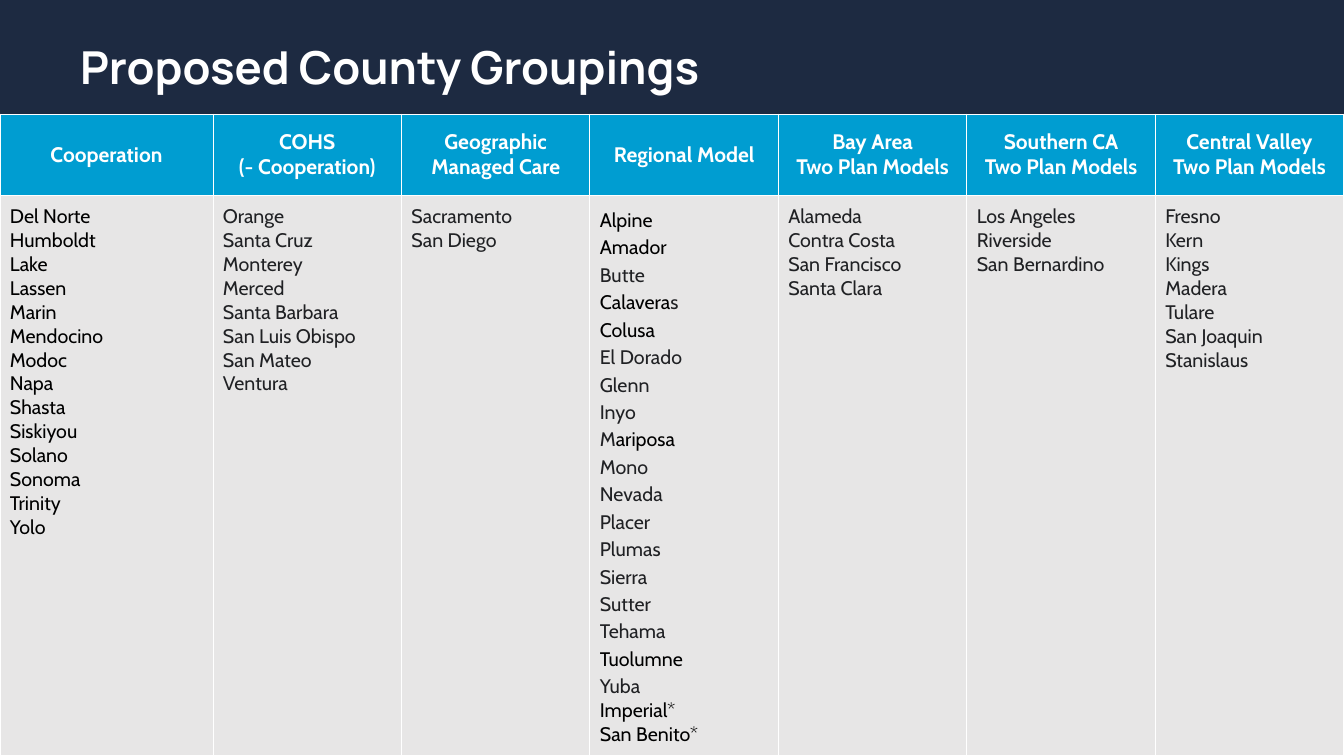
from lxml import etree
from pptx import Presentation
from pptx.dml.color import RGBColor
from pptx.enum.shapes import MSO_SHAPE
from pptx.enum.text import MSO_ANCHOR, PP_ALIGN
from pptx.oxml.ns import qn
from pptx.util import Pt

RECT = MSO_SHAPE.RECTANGLE
MIDDLE, TOP = MSO_ANCHOR.MIDDLE, MSO_ANCHOR.TOP
CENTER, LEFT = PP_ALIGN.CENTER, PP_ALIGN.LEFT

NAVY, BLUE, GREY, WHITE = "1D2A41", "009DD1", "E7E6E6", "FFFFFF"
BLACK, INK = "000000", "202124"

TITLE = "Proposed County Groupings"
# Each group: heading lines, then its counties
GROUPS = [
    (["Cooperation"],
     ["Del Norte", "Humboldt", "Lake", "Lassen", "Marin", "Mendocino", "Modoc",
      "Napa", "Shasta", "Siskiyou", "Solano", "Sonoma", "Trinity", "Yolo"]),
    (["COHS", "(- Cooperation)"],
     ["Orange", "Santa Cruz", "Monterey", "Merced", "Santa Barbara",
      "San Luis Obispo", "San Mateo", "Ventura"]),
    (["Geographic Managed Care"], ["Sacramento", "San Diego"]),
    (["Regional Model"],
     ["Alpine", "Amador", "Butte", "Calaveras", "Colusa", "El Dorado", "Glenn",
      "Inyo", "Mariposa", "Mono", "Nevada", "Placer", "Plumas", "Sierra",
      "Sutter", "Tehama", "Tuolumne", "Yuba", "Imperial*", "San Benito*"]),
    (["Bay Area", "Two Plan Models"],
     ["Alameda", "Contra Costa", "San Francisco", "Santa Clara"]),
    (["Southern CA", "Two Plan Models"],
     ["Los Angeles", "Riverside", "San Bernardino"]),
    (["Central Valley", "Two Plan Models"],
     ["Fresno", "Kern", "Kings", "Madera", "Tulare", "San Joaquin",
      "Stanislaus"]),
]
DARK = set(GROUPS[0][1]) | {"Alpine", "Amador", "Colusa", "Tuolumne",
                            "Imperial*", "San Benito*"}
SPLIT = {"Calaveras": [("Calavera", BLACK), ("s", INK)],
         "Mariposa": [("M", INK), ("ariposa", BLACK)]}
LOOSE = set(GROUPS[3][1][:-2])  # counties set with wider line spacing

WIDE, HIGH = 1344, 756
BAND, TABLE_TOP = 115, 114
FIRST, HEAD, BODY = 213, 81, 560
PAD = 10


def px(n):
    return round(n * 12192000 / WIDE)


def rgb(code):
    return RGBColor.from_string(code)


def paint(thing, code):
    thing.fill.solid()
    thing.fill.fore_color.rgb = rgb(code)


def write(para, runs, font, size, bold, align=LEFT, lead=None):
    """Fill a paragraph with (text, colour) runs."""
    para.alignment = align
    if lead:
        para.line_spacing = lead
    for text, code in runs:
        run = para.add_run()
        run.text = text
        run.font.name, run.font.size, run.font.bold = font, Pt(size), bold
        run.font.color.rgb = rgb(code)


def inset(box, side, end):
    box.margin_left = box.margin_right = px(side)
    box.margin_top = box.margin_bottom = px(end)


def edge(cell):
    """Draw a thin white border on all four sides."""
    props = cell._tc.get_or_add_tcPr()
    for side in ("lnL", "lnR", "lnT", "lnB"):
        line = etree.SubElement(props, qn("a:" + side), w=str(Pt(0.75)))
        fill = etree.SubElement(line, qn("a:solidFill"))
        etree.SubElement(fill, qn("a:srgbClr"), val=WHITE)


def fill_cell(cell, code, anchor, lines):
    """Style a cell; lines holds the arguments of each paragraph."""
    edge(cell)
    paint(cell, code)
    inset(cell, PAD, PAD)
    cell.vertical_anchor = anchor
    frame = cell.text_frame
    for i, args in enumerate(lines):
        write(frame.add_paragraph() if i else frame.paragraphs[0], *args)


def county(name):
    runs = SPLIT.get(name, [(name, BLACK if name in DARK else INK)])
    return runs, "Cabin", 14, False, LEFT, 1.15 if name in LOOSE else None


def main():
    deck = Presentation()
    deck.slide_width, deck.slide_height = px(WIDE), px(HIGH)
    slide = deck.slides.add_slide(deck.slide_layouts[6])
    paint(slide.background, GREY)

    band = slide.shapes.add_shape(RECT, 0, 0, px(WIDE), px(BAND))
    band.shadow.inherit = False
    paint(band, NAVY)
    band.line.fill.background()

    title = slide.shapes.add_textbox(px(70), px(26), px(997), px(69)).text_frame
    title.word_wrap = True
    title.vertical_anchor = MIDDLE
    inset(title, PAD, 5)
    write(title.paragraphs[0], [(TITLE, WHITE)], "Manrope", 32.4, True, LEFT, 1.2)

    table = slide.shapes.add_table(2, len(GROUPS), 0, px(TABLE_TOP),
                                   px(WIDE), px(HEAD + BODY)).table
    table.rows[0].height, table.rows[1].height = px(HEAD), px(BODY)
    rest = (WIDE - FIRST) / (len(GROUPS) - 1)
    for col, (heads, names) in enumerate(GROUPS):
        table.columns[col].width = px(rest if col else FIRST)
        fill_cell(table.cell(0, col), BLUE, MIDDLE,
                  [([(h, WHITE)], "Cabin", 15, True, CENTER) for h in heads])
        fill_cell(table.cell(1, col), GREY, TOP, [county(n) for n in names])

    deck.save("out.pptx")


if __name__ == "__main__":
    main()
